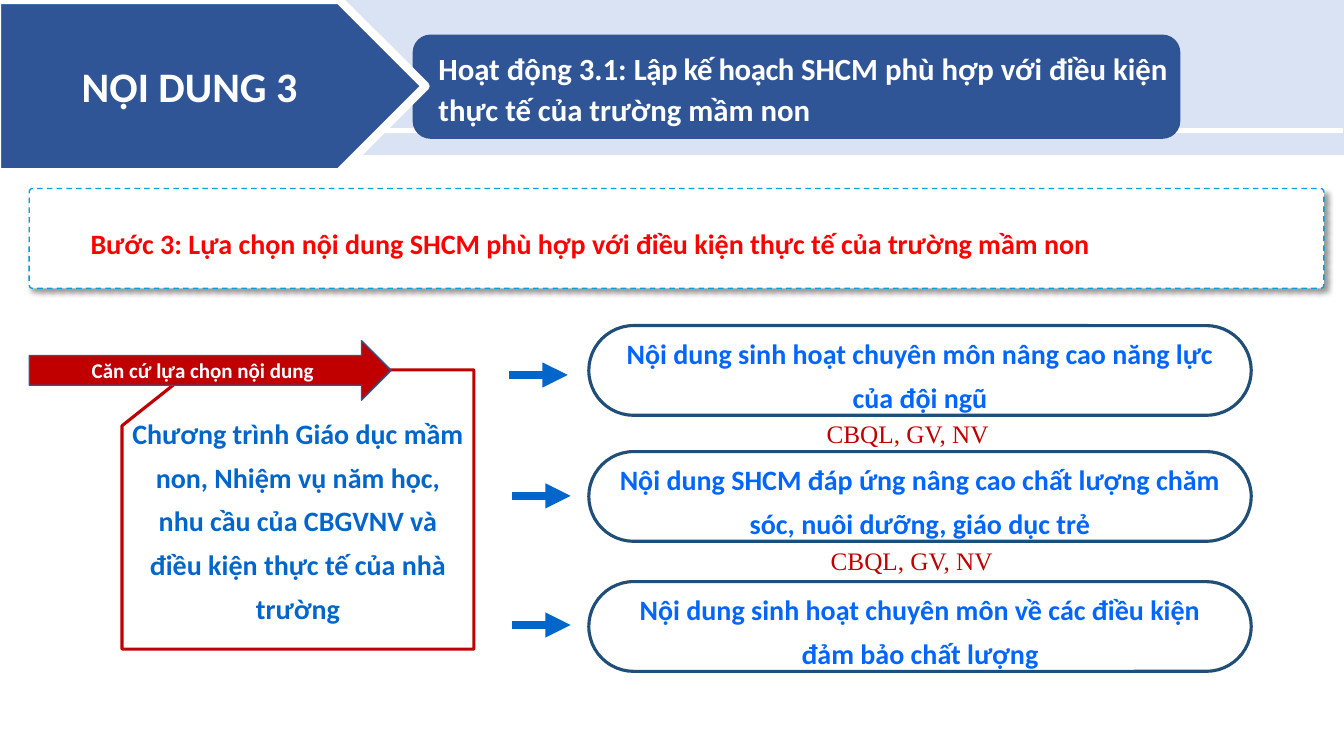
from lxml import etree
from pptx import Presentation
from pptx.dml.color import RGBColor
from pptx.enum.dml import MSO_LINE
from pptx.enum.shapes import MSO_CONNECTOR, MSO_SHAPE
from pptx.enum.text import MSO_ANCHOR, MSO_AUTO_SIZE, PP_ALIGN
from pptx.oxml.ns import qn
from pptx.util import Inches, Pt

RECT = MSO_SHAPE.RECTANGLE
ROUNDED = MSO_SHAPE.ROUNDED_RECTANGLE
PENTAGON = MSO_SHAPE.PENTAGON
CARD = MSO_SHAPE.FLOWCHART_CARD
ARROW = MSO_SHAPE.RIGHT_ARROW
STRAIGHT = MSO_CONNECTOR.STRAIGHT
CENTER, LEFT = PP_ALIGN.CENTER, PP_ALIGN.LEFT
MIDDLE, TOP = MSO_ANCHOR.MIDDLE, MSO_ANCHOR.TOP
DASH = MSO_LINE.DASH

COLORS = {
    "white": "FFFFFF", "black": "000000", "band": "DAE3F3", "navy": "2F5597",
    "edge": "325491", "pill_edge": "1F4E79", "pill_text": "0066FF",
    "blue": "0066CC", "cyan": "00A1DA", "red": "FF0000", "dark_red": "C00000",
}

# Topic text, pill top, arrow left, arrow height on the slide
TOPICS = [
    ("Nội dung sinh hoạt chuyên môn nâng cao năng lực của đội ngũ",
     3.23, 5.05, 3.72),
    ("Nội dung SHCM đáp ứng nâng cao chất lượng chăm sóc, nuôi dưỡng, giáo dục trẻ",
     4.48, 5.08, 4.92),
    ("Nội dung sinh hoạt chuyên môn về các điều kiện đảm bảo chất lượng",
     5.77, 5.08, 6.2),
]
AUDIENCE = "CBQL, GV, NV"
AUDIENCE_SPOTS = [(8.1, 4.1), (8.14, 5.36)]


def rgb(name):
    return RGBColor.from_string(COLORS[name])


def write(box, spans, size, color, font="Calibri", bold=True,
          align=CENTER, anchor=MIDDLE, spacing=1.0):
    """Fill a shape with one paragraph of (text, tracking) spans."""
    frame = box.text_frame
    frame.word_wrap = True
    frame.vertical_anchor = anchor
    para = frame.paragraphs[0]
    para.alignment = align
    para.line_spacing = spacing
    formats = {"name": font, "size": Pt(size), "bold": bold}
    for text, tracking in spans:
        span = para.add_run()
        span.text = text
        for key, value in formats.items():
            setattr(span.font, key, value)
        span.font.color.rgb = rgb(color)
        if tracking:
            span._r.get_or_add_rPr().set("spc", str(tracking))
    return para


def add_block(page, kind, place, fill, line=None, width=1, corner=None):
    box = page.shapes.add_shape(kind, *map(Inches, place))
    box.shadow.inherit = False
    box.fill.solid()
    box.fill.fore_color.rgb = rgb(fill)
    if line:
        box.line.color.rgb = rgb(line)
        box.line.width = Pt(width)
    else:
        box.line.fill.background()
    if corner is not None:
        box.adjustments[0] = corner
    return box


def add_label(page, place, spans, size, color, **style):
    box = page.shapes.add_textbox(*map(Inches, place))
    write(box, spans, size, color, align=LEFT, anchor=TOP, **style)
    return box


def set_alpha(color_element, percent):
    etree.SubElement(color_element, qn("a:alpha")).set("val", str(percent * 1000))


def add_shadow(box):
    effects = box._element.spPr.find(qn("a:effectLst"))
    shadow = etree.SubElement(effects, qn("a:outerShdw"))
    settings = {"blurRad": Pt(4), "dist": Pt(3), "dir": 45 * 60000,
                "algn": "tl", "rotWithShape": 0}
    for key, value in settings.items():
        shadow.set(key, str(value))
    color = etree.SubElement(shadow, qn("a:srgbClr"))
    color.set("val", COLORS["black"])
    set_alpha(color, 40)


def add_pill(page, text, top):
    pill = add_block(page, ROUNDED, (5.84, top, 6.57, 0.89), "white",
                     "pill_edge", 2.25, corner=0.5)
    set_alpha(pill._element.spPr.find(qn("a:solidFill"))[0], 95)
    write(pill, [(text, 0)], 20, "pill_text", spacing=1.3)


def add_arrow(page, left, height):
    start, end, y = Inches(left), Inches(left + 0.58), Inches(height)
    arrow = page.shapes.add_connector(STRAIGHT, start, y, end, y)
    arrow.line.color.rgb = rgb("blue")
    arrow.line.width = Pt(6)
    line = arrow.line._get_or_add_ln()
    etree.SubElement(line, qn("a:tailEnd")).set("type", "triangle")
    etree.SubElement(arrow._element.spPr, qn("a:effectLst"))


def add_header(page):
    add_block(page, RECT, (0, 0, 13.33, 1.54), "band")
    add_block(page, RECT, (2.22, 1.27, 11.1, 0.05), "white")
    add_block(page, ROUNDED, (4.1, 0.35, 7.6, 1.02), "navy", "edge")
    section = add_block(page, PENTAGON, (-0.03, 0, 4.25, 1.71), "navy", "white", 6)
    write(section, [("NỘI DUNG 3", 0)], 30, "white")
    title = [("Hoạt động 3.1: ", 0), ("Lập kế hoạch ", -30),
             ("SHCM phù hợp với điều kiện thực tế của trường mầm non", 0)]
    add_label(page, (4.25, 0.41, 7.45, 0.9), title, 22, "white", spacing=1.1)


def add_step(page):
    step = add_block(page, ROUNDED, (0.29, 1.87, 12.84, 0.99), "white", "cyan",
                     corner=0.033)
    step.line.dash_style = DASH
    add_shadow(step)
    text = "Bước 3: Lựa chọn nội dung SHCM phù hợp với điều kiện thực tế của trường mầm non"
    para = write(step, [(text, 0)], 20, "red", align=LEFT, spacing=1.3)
    para._p.get_or_add_pPr().set("indent", str(Inches(0.5)))


def add_basis(page):
    card = add_block(page, CARD, (1.21, 3.67, 3.49, 2.77), "white", "dark_red", 2.25)
    text = ("Chương trình Giáo dục mầm non, Nhiệm vụ năm học, nhu cầu của CBGVNV "
            "và điều kiện thực tế của nhà trường")
    write(card, [(text, 0)], 20, "blue", spacing=1.3)
    card.text_frame.margin_bottom = Inches(0.48)
    banner = add_block(page, ARROW, (0.29, 3.38, 3.59, 0.59), "dark_red", "edge")
    write(banner, [("Căn cứ lựa chọn nội dung", 0)], 15, "white")


def main():
    deck = Presentation()
    deck.slide_width, deck.slide_height = Inches(13.33), Inches(7.5)
    page = deck.slides.add_slide(deck.slide_layouts[6])

    # Heading and current step
    add_header(page)
    add_step(page)

    # Basis for the choice
    add_basis(page)

    # Topics, each with its arrow
    for text, top, arrow_left, arrow_height in TOPICS:
        add_pill(page, text, top)
        add_arrow(page, arrow_left, arrow_height)

    # Audience between the topics
    for left, top in AUDIENCE_SPOTS:
        label = add_label(page, (left, top, 1.85, 0.4), [(AUDIENCE, 0)], 18,
                          "dark_red", font="Times New Roman", bold=False)
        label.text_frame.auto_size = MSO_AUTO_SIZE.SHAPE_TO_FIT_TEXT

    deck.save("out.pptx")


if __name__ == "__main__":
    main()
